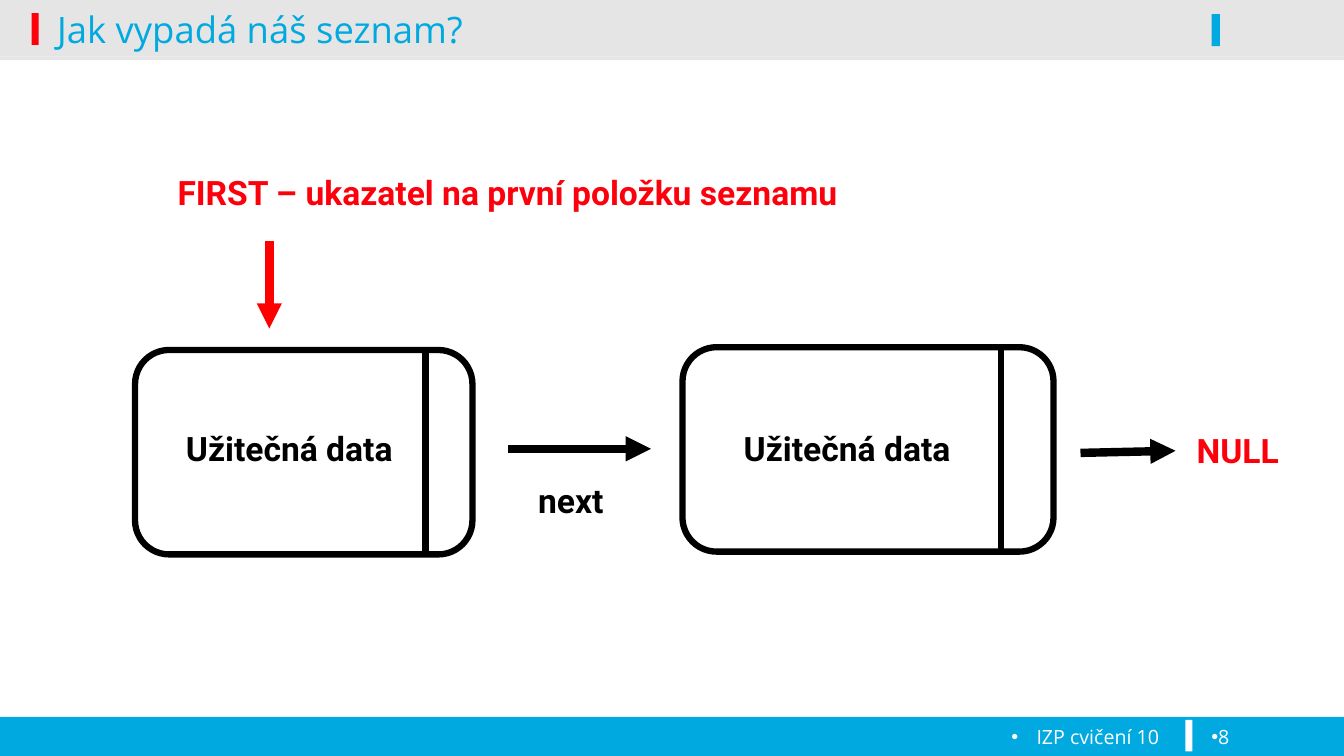
import lxml.etree
import pptx
import pptx.dml.color
import pptx.enum.shapes
import pptx.enum.text
import pptx.oxml.ns
import pptx.util
from dataclasses import dataclass

Pt = pptx.util.Pt
Align = pptx.enum.text.PP_ALIGN
Anchor = pptx.enum.text.MSO_ANCHOR
Shapes = pptx.enum.shapes.MSO_SHAPE
qn = pptx.oxml.ns.qn


@dataclass(frozen=True)
class Theme:
    blue: str = "00A9E0"
    red: str = "FE000C"
    arrow_red: str = "FF0000"
    black: str = "000000"
    white: str = "FFFFFF"
    heading_font: str = "Open Sans"
    body_font: str = "Roboto"
    title_size: float = 26
    body_size: float = 24
    footer_size: float = 14
    outline: float = 4.5
    arrow: float = 6


def rgb(color):
    return pptx.dml.color.RGBColor.from_string(color)


def add_child(parent, tag, **attributes):
    child = lxml.etree.SubElement(parent, qn(tag))
    for name, value in attributes.items():
        child.set(name, str(value))


class SlideBuilder:
    def __init__(self, slide, theme):
        self.shapes = slide.shapes
        self.theme = theme

    def box(self, left, top, width, height, fill, kind=Shapes.RECTANGLE,
            outline=None, opacity=None):
        """Draw a filled shape; opacity is a percentage."""
        shape = self.shapes.add_shape(kind, Pt(left), Pt(top), Pt(width), Pt(height))
        shape.shadow.inherit = False
        shape.fill.solid()
        shape.fill.fore_color.rgb = rgb(fill)
        if opacity is not None:
            color = shape._element.spPr.find(qn("a:solidFill"))[0]
            add_child(color, "a:alpha", val=opacity * 1000)
        if outline:
            shape.line.color.rgb = rgb(outline)
            shape.line.width = Pt(self.theme.outline)
        else:
            shape.line.fill.background()

    def line(self, start, end, color, width, arrowhead=False):
        line = self.shapes.add_connector(
            pptx.enum.shapes.MSO_CONNECTOR.STRAIGHT, *map(Pt, start + end))
        line.line.color.rgb = rgb(color)
        line.line.width = Pt(width)
        properties = line._element.spPr
        if arrowhead:
            add_child(properties.find(qn("a:ln")), "a:tailEnd", type="triangle")
        add_child(properties, "a:effectLst")

    def arrow(self, start, end, color):
        self.line(start, end, color, self.theme.arrow, arrowhead=True)

    def text(self, words, left, top, width, height, *, color=None, size=None,
             font=None, bold=True, align=Align.CENTER, anchor=Anchor.TOP,
             bullet_indent=None):
        """Add one paragraph; bullet_indent, if given, adds a hanging bullet."""
        frame = self.shapes.add_textbox(Pt(left), Pt(top), Pt(width), Pt(height)).text_frame
        frame.word_wrap = True
        frame.vertical_anchor = anchor
        paragraph = frame.paragraphs[0]
        paragraph.alignment = align
        if bullet_indent is not None:
            properties = paragraph._p.get_or_add_pPr()
            properties.set("marL", str(int(Pt(bullet_indent))))
            properties.set("indent", str(-int(Pt(bullet_indent))))
            add_child(properties, "a:buFont", typeface="Arial")
            add_child(properties, "a:buChar", char="•")
        run = paragraph.add_run()
        run.text = words
        run.font.name = font or self.theme.body_font
        run.font.size = Pt(size or self.theme.body_size)
        run.font.bold = bold
        run.font.color.rgb = rgb(color or self.theme.black)

    def footer(self, words, left, width, align, bullet_indent):
        self.text(words, left, 514, width, 26, color=self.theme.white,
                  size=self.theme.footer_size, font=self.theme.heading_font,
                  bold=False, align=align, bullet_indent=bullet_indent)

    def list_item(self, left, top, width, divider, label_left, label_width):
        """Draw a list node: data on the left, pointer cell right of the divider."""
        height = 146
        self.box(left, top, width, height, self.theme.white,
                 kind=Shapes.ROUNDED_RECTANGLE, outline=self.theme.black)
        self.line((divider, top), (divider, top + height),
                  self.theme.black, self.theme.outline)
        self.text("Užitečná data", label_left, 302.4, label_width, 36)


def main():
    theme = Theme()
    deck = pptx.Presentation()
    deck.slide_width, deck.slide_height = Pt(960), Pt(540)
    page = SlideBuilder(deck.slides.add_slide(deck.slide_layouts[6]), theme)

    page.box(0, 512, 960, 28, theme.blue)
    page.box(0, 40.2, 960, 2.8, theme.black, opacity=10)
    page.box(0, 0, 960, 40.2, theme.black, opacity=10)
    page.box(22.5, 9.4, 5.2, 22.6, theme.red)
    page.box(846.8, 514.2, 5, 22.5, theme.white)
    page.box(865.5, 10.2, 5.8, 22.8, theme.blue)

    page.footer("IZP cvičení 10", 11.5, 823.7, Align.RIGHT, 18)
    page.footer("8", 858.2, 87, Align.LEFT, 0)
    page.text("Jak vypadá náš seznam?", 33.8, -7.9, 828, 57, color=theme.blue,
              size=theme.title_size, font=theme.heading_font, bold=False,
              align=Align.LEFT, anchor=Anchor.MIDDLE)

    page.text("FIRST – ukazatel na první položku seznamu",
              76.3, 119.5, 572.4, 36, color=theme.red)
    page.arrow((192.4, 172.5), (192.4, 234.7), theme.arrow_red)

    page.list_item(96.5, 250, 241, 304, 112.3, 188.6)
    page.arrow((363, 320.6), (465, 320.6), theme.black)
    page.text("next", 377.3, 339.2, 205, 71, align=Align.LEFT)

    page.list_item(487.5, 248, 265, 715, 491, 228.2)
    page.arrow((771.8, 323.5), (839.7, 322), theme.black)
    page.text("NULL", 844.6, 303.2, 79, 36, color=theme.red)

    deck.save("out.pptx")


if __name__ == "__main__":
    main()
